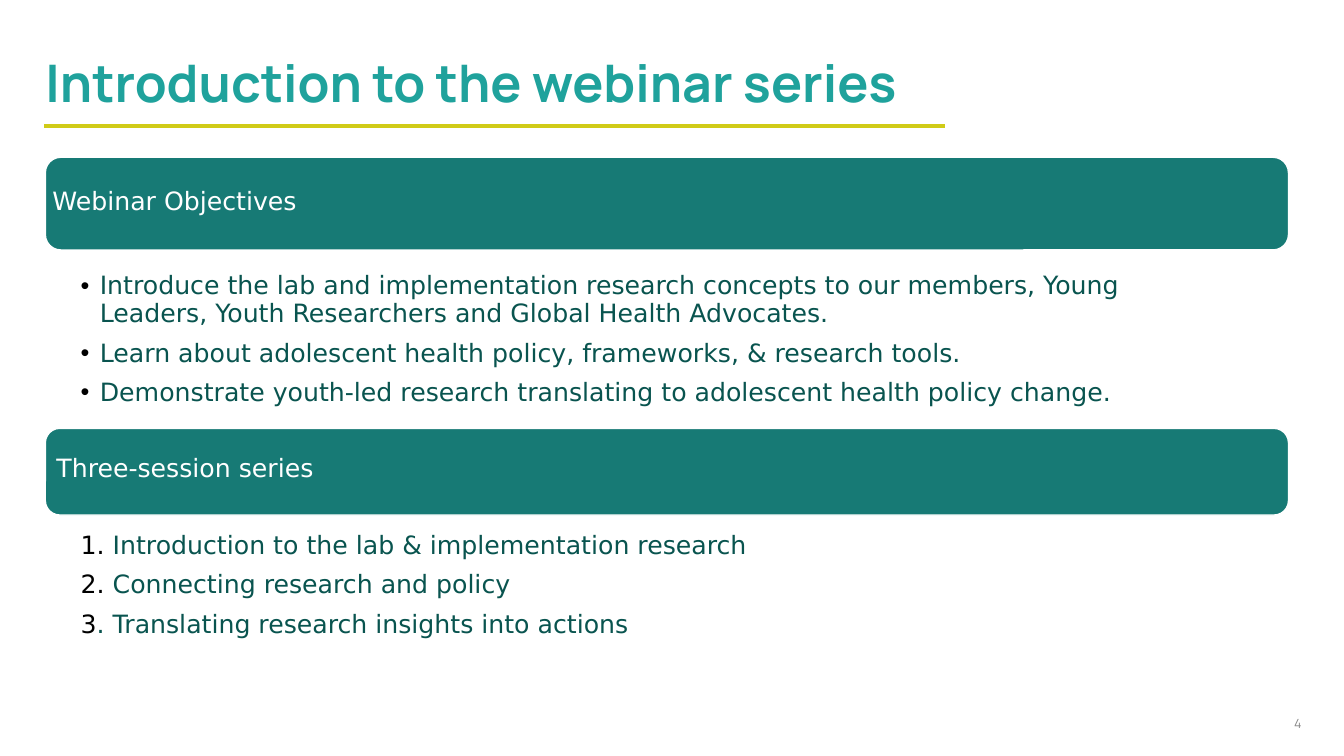
from lxml import etree
from pptx import Presentation
from pptx.dml.color import RGBColor
from pptx.enum.shapes import MSO_CONNECTOR, MSO_SHAPE
from pptx.enum.text import MSO_ANCHOR, MSO_AUTO_SIZE, PP_ALIGN
from pptx.oxml.ns import qn
from pptx.util import Inches, Pt

LINE, ROUND = MSO_CONNECTOR.STRAIGHT, MSO_SHAPE.ROUNDED_RECTANGLE
TOP, MIDDLE = MSO_ANCHOR.TOP, MSO_ANCHOR.MIDDLE
LEFT, RIGHT = PP_ALIGN.LEFT, PP_ALIGN.RIGHT
NO_FIT = MSO_AUTO_SIZE.NONE

# Content: each list item is a pair of marker and text
TITLE = "Introduction to the webinar series"
PAGE = "4"
GOALS = [
    ("", "Introduce the lab and implementation research concepts to our members, "
         "Young Leaders, Youth Researchers and Global Health Advocates."),
    ("", "Learn about adolescent health policy, frameworks, & research tools."),
    ("", "Demonstrate youth-led research translating to adolescent health "
         "policy change."),
]
TALKS = [
    ("1. ", "Introduction to the lab & implementation research"),
    ("2.", " Connecting research and policy"),
    ("3", ". Translating research insights into actions"),
]

# Look
HEAD, BODY = "Manrope", "DejaVu Sans"
TEAL, BAR, DEEP = "1FA29C", "177A75", "09544F"
LIME, GREY, WHITE, BLACK = "D0CB17", "888888", "FFFFFF", "000000"

# Layout in inches
WIDE, HIGH = 13.33, 7.5
EDGE = 0.45
BAR_W, LIST_W = 12.33, 10.89
# heading, bar top and height, label box, list top and height, items, bullets
PARTS = [
    ("Webinar Objectives", (1.56, 0.92), (EDGE, 1.65, 12.27, 0.71),
     (2.69, 1.22), GOALS, True),
    ("Three-session series", (4.25, 0.86), (0.49, 4.23, 10.8, 0.85),
     (5.26, 1.67), TALKS, False),
]


def color(code):
    return RGBColor.from_string(code)


def place(shape, box):
    shape.left, shape.top, shape.width, shape.height = map(Inches, box)


def setup(shape, pads, anchor=TOP):
    frame = shape.text_frame
    frame.word_wrap = True
    frame.auto_size = NO_FIT
    frame.vertical_anchor = anchor
    (frame.margin_left, frame.margin_top,
     frame.margin_right, frame.margin_bottom) = map(Inches, pads)
    return frame


def write(para, text, size, font, code, bold=False):
    run = para.add_run()
    run.text = text
    run.font.size = Pt(size)
    run.font.name = font
    run.font.bold = bold
    run.font.color.rgb = color(code)


def mark(para, bullet):
    """Set the hanging indent and the bullet of a list item."""
    props = para._p.get_or_add_pPr()
    props.set("marL", str(Inches(0.19)))
    props.set("indent", str(-Inches(0.19)))
    if not bullet:
        etree.SubElement(props, qn("a:buNone"))
        return
    tint = etree.SubElement(props, qn("a:buClr"))
    etree.SubElement(tint, qn("a:srgbClr")).set("val", BLACK)
    etree.SubElement(props, qn("a:buChar")).set("char", "•")


def fill_list(shape, items, bullet):
    frame = setup(shape, (0.35, 0.02, 0.14, 0.02))
    for i, (tag, text) in enumerate(items):
        para = frame.add_paragraph() if i else frame.paragraphs[0]
        para.level = 1
        para.alignment = LEFT
        para.line_spacing = 0.9
        para.space_before = Pt(9)
        para.space_after = Pt(0)
        mark(para, bullet)
        if tag:
            write(para, tag, 18, BODY, BLACK)
        write(para, text, 18, BODY, DEEP)


def add_bar(slide, top, high):
    bar = slide.shapes.add_shape(
        ROUND, *map(Inches, (EDGE, top, BAR_W, high)))
    bar.adjustments[0] = 0.167
    bar.shadow.inherit = False
    bar.fill.solid()
    bar.fill.fore_color.rgb = color(BAR)
    bar.line.color.rgb = color(WHITE)
    bar.line.width = Pt(1)


def add_text(slide, box, pads, text, size, font, code,
             anchor=TOP, align=LEFT, lead=1.0):
    shape = slide.shapes.add_textbox(*map(Inches, box))
    para = setup(shape, pads, anchor).paragraphs[0]
    para.alignment = align
    para.line_spacing = lead
    write(para, text, size, font, code)


def main():
    deck = Presentation()
    deck.slide_width, deck.slide_height = Inches(WIDE), Inches(HIGH)
    slide = deck.slides.add_slide(deck.slide_layouts[3])
    title, *lists = [slide.placeholders[i] for i in range(3)]

    # Title and rule
    place(title, (EDGE, 0.45, 12.51, 0.89))
    para = setup(title, (0, 0.1, 0, 0)).paragraphs[0]
    para.alignment = LEFT
    para.line_spacing = 0.95
    write(para, TITLE, 37, HEAD, TEAL, True)
    rule = slide.shapes.add_connector(
        LINE, *map(Inches, (0.44, 1.25, 9.37, 1.25)))
    rule.line.color.rgb = color(LIME)
    rule.line.width = Pt(3.25)
    etree.SubElement(rule._element.spPr, qn("a:effectLst"))

    # Bars with their lists
    for body, part in zip(lists, PARTS):
        head, (top, high), label, (start, depth), items, bullet = part
        add_bar(slide, top, high)
        add_text(slide, label, [0.07] * 4, head, 18, BODY, WHITE,
                 anchor=MIDDLE, lead=0.9)
        place(body, (EDGE, start, LIST_W, depth))
        fill_list(body, items, bullet)

    # Page number
    add_text(slide, (9.91, 7.06, 3, 0.26), (0, 0.04, 0, 0),
             PAGE, 9, HEAD, GREY, align=RIGHT)
    deck.save("out.pptx")


if __name__ == "__main__":
    main()
